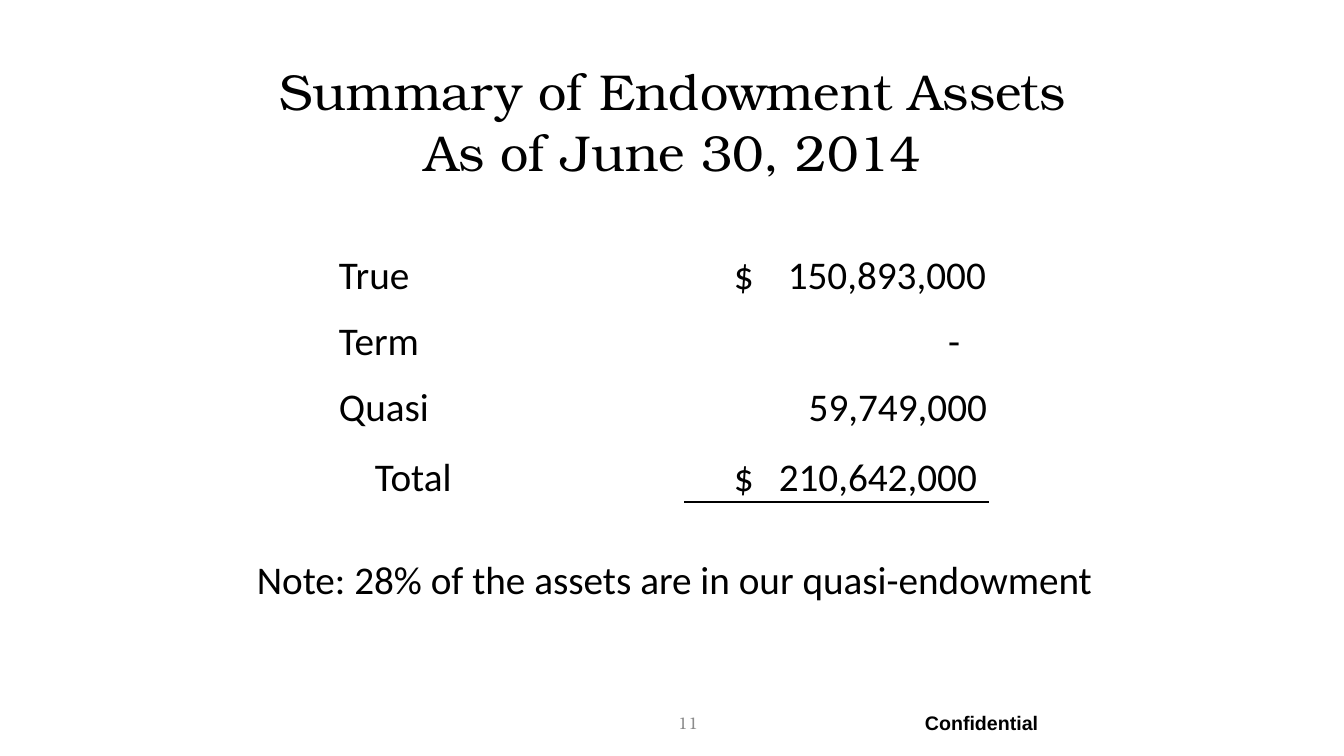
import pptx
import pptx.dml.color
import pptx.enum.text
import pptx.oxml
import pptx.oxml.ns
import pptx.util

ALIGN = pptx.enum.text.PP_ALIGN
ANCHOR = pptx.enum.text.MSO_ANCHOR
SERIF, SANS = "TeX Gyre Bonum", "Calibri"


def px(n):
    """Turn pixels into EMU."""
    return pptx.util.Emu(round(n * 914400 / 100.8))


def rgb(value):
    """Turn a hex string into a colour."""
    return pptx.dml.color.RGBColor.from_string(value)


def xml(tag, attrs, inner=""):
    """Make one DrawingML element."""
    ns = pptx.oxml.ns.nsdecls("a")
    return pptx.oxml.parse_xml(f"<a:{tag} {ns} {attrs}>{inner}</a:{tag}>")


def style(p, font, size, color="000000", bold=False, align=ALIGN.LEFT):
    """Set the alignment and font of a paragraph."""
    p.alignment = align
    p.font.name, p.font.size, p.font.bold = font, pptx.util.Pt(size), bold
    p.font.color.rgb = rgb(color)


def add_text(s, box, text, font, size, anchor=ANCHOR.TOP, **look):
    """Place a wrapped one-paragraph text box."""
    tf = s.shapes.add_textbox(*map(px, box)).text_frame
    tf.word_wrap = True
    tf.vertical_anchor = anchor
    p = tf.paragraphs[0]
    p.text = text
    style(p, font, size, **look)


def fill_cell(cell, text, left=1, right=1, align=ALIGN.LEFT, tab=None, rule=None):
    """Fill a plain table cell, with an optional right tab and bottom rule."""
    cell.fill.background()
    cell.vertical_anchor = ANCHOR.BOTTOM
    cell.margin_left, cell.margin_right = px(left), px(right)
    cell.margin_top, cell.margin_bottom = px(1), 0
    p = cell.text_frame.paragraphs[0]
    p.text = text
    if tab:
        stop = f'<a:tab pos="{px(tab)}" algn="r"/>'
        p._p.get_or_add_pPr().append(xml("tabLst", "", stop))
    style(p, SANS, 28, align=align)
    if rule:
        solid = '<a:solidFill><a:srgbClr val="000000"/></a:solidFill>'
        line = xml("lnB", f'w="{pptx.util.Pt(rule)}"', solid)
        cell._tc.get_or_add_tcPr().insert(0, line)


def add_assets(s, box):
    """Place the table of endowment assets."""
    rows = [
        ("True", {}, "$\t150,893,000", dict(left=49, tab=252)),
        ("Term", {}, "-", dict(right=28, align=ALIGN.RIGHT)),
        ("Quasi", {}, "59,749,000", dict(align=ALIGN.RIGHT, rule=0.5)),
        ("Total", dict(left=37), "$\t210,642,000", dict(left=49, tab=243, rule=2)),
    ]
    table = s.shapes.add_table(len(rows), 2, *map(px, box)).table
    table.first_row = table.horz_banding = False
    for col, width in zip(table.columns, (347, box[2] - 347)):
        col.width = px(width)
    for row, height in zip(table.rows, (66, 66, 66, box[3] - 198)):
        row.height = px(height)
    for i, (label, label_look, amount, amount_look) in enumerate(rows):
        fill_cell(table.cell(i, 0), label, **label_look)
        fill_cell(table.cell(i, 1), amount, **amount_look)


def add_footer(s, box):
    """Place the page number and the confidentiality mark."""
    x, y, w, h = box
    add_text(s, (x, y, 314, h), "11", SERIF, 12, ANCHOR.MIDDLE,
             color="8C8C8C", align=ALIGN.CENTER)
    add_text(s, (x + w - 260, y + 3, 260, 34), "Confidential", "Arial", 14, bold=True)


def build_slide(prs):
    """Build the endowment summary slide."""
    s = prs.slides.add_slide(prs.slide_layouts[6])
    add_text(s, (219, 58, 907, 126), "Summary of Endowment Assets\vAs of June 30, 2014",
             SERIF, 36, ANCHOR.MIDDLE, align=ALIGN.CENTER)
    add_assets(s, (338, 234, 650, 268))
    add_text(s, (247, 550, 872, 57),
             "Note: 28% of the assets are in our quasi-endowment", SANS, 28)
    add_footer(s, (531, 703, 644, 40))


def main():
    """Save the presentation."""
    prs = pptx.Presentation()
    prs.slide_width, prs.slide_height = px(1344), px(756)
    build_slide(prs)
    prs.save("out.pptx")


if __name__ == "__main__":
    main()
